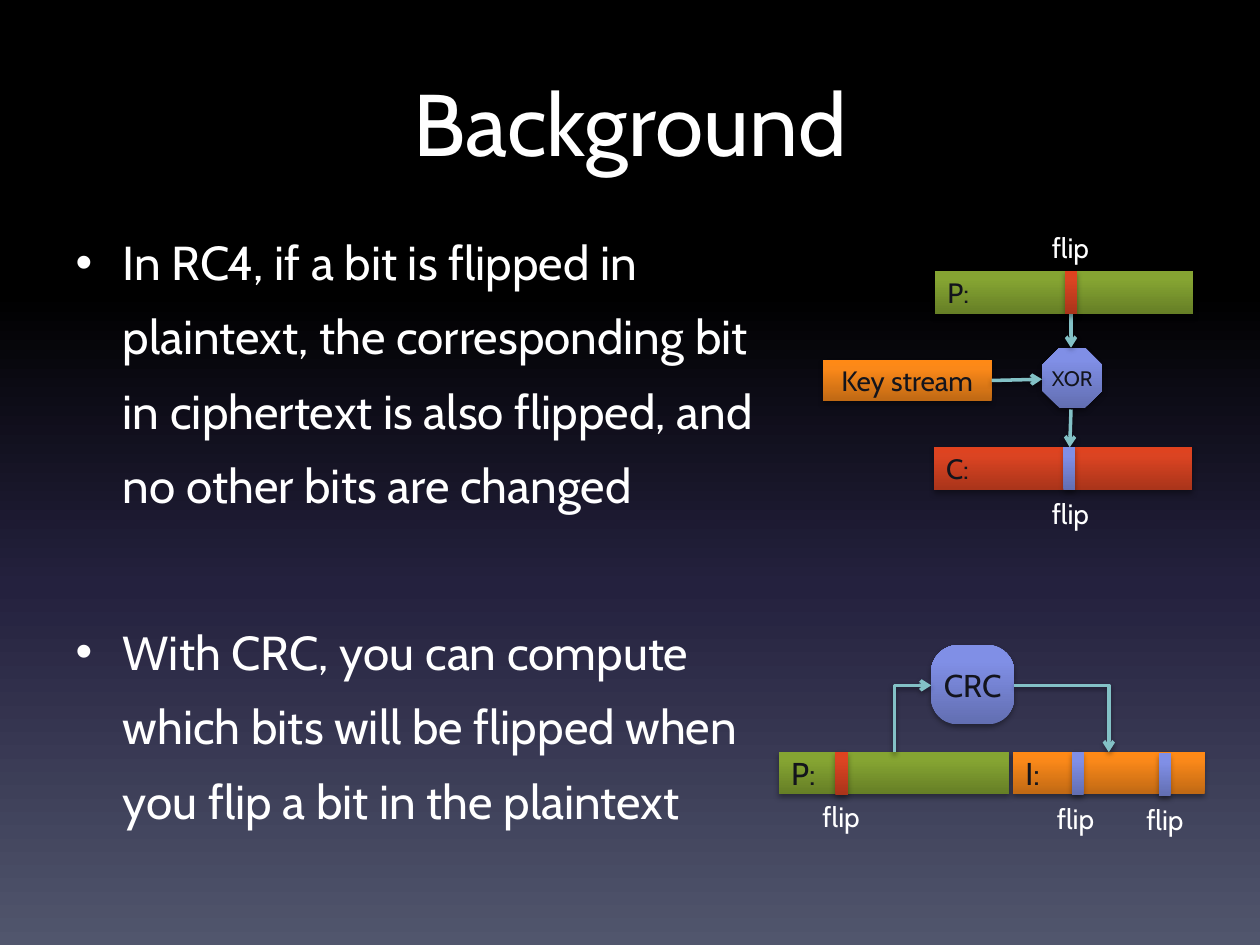
"""Build the Background slide on bit flipping in RC4 and CRC."""
from dataclasses import dataclass

from lxml.etree import SubElement as Sub
from pptx import Presentation
from pptx.dml.color import RGBColor
from pptx.enum.shapes import MSO_CONNECTOR as Conn, MSO_SHAPE as Kind
from pptx.enum.text import MSO_ANCHOR as Anchor, MSO_AUTO_SIZE as Fit, PP_ALIGN as Align
from pptx.oxml.ns import qn
from pptx.util import Inches, Pt

INK = {"text": "FFFFFF", "dark": "13141C", "line": "83C1C6", "shade": "000000"}
FADE = {
    "back": {0: "000000", 31: "000000", 62: "24213E", 100: "51566D"},
    "green": {0: "667F26", 80: "85A432", 100: "87A730"},
    "red": {0: "A9341A", 80: "DB4422", 100: "E0421E"},
    "orange": {0: "C06914", 80: "FA8819", 100: "FF8915"},
    "blue": {0: "626EB1", 80: "808FE6", 100: "7E8EE9"},
}
MID = {"vertical_anchor": Anchor.MIDDLE, "word_wrap": True, "auto_size": Fit.NONE}
TOP = MID | {"vertical_anchor": Anchor.TOP}
TAG = TOP | {"word_wrap": False, "margin_left": 0, "margin_right": 0}


@dataclass
class Block:
    x: float
    y: float
    w: float
    h: float
    fade: str
    text: str = ""
    size: int = 16
    align: Align = Align.CENTER
    kind: Kind = Kind.RECTANGLE
    side: float = 0.1


@dataclass
class Link:
    x: float
    y: float
    to_x: float
    to_y: float
    bend: str = ""


@dataclass
class Flip:
    x: float
    y: float
    fade: str
    tag_x: float
    tag_y: float
    w: float = 0.09


BLOCKS = [
    Block(7.42, 2.15, 2.05, 0.34, "green", "P:", align=Align.LEFT),
    Block(7.41, 3.55, 2.05, 0.34, "red", "C:", align=Align.LEFT),
    Block(6.53, 2.86, 1.34, 0.32, "orange", "Key stream"),
    Block(8.27, 2.76, 0.48, 0.48, "blue", "XOR", 12, kind=Kind.OCTAGON, side=0),
    Block(6.18, 5.97, 1.83, 0.33, "green", "P:", 18, Align.LEFT),
    Block(7.39, 5.12, 0.66, 0.63, "blue", "CRC", 18, kind=Kind.ROUNDED_RECTANGLE, side=0),
    Block(8.04, 5.97, 1.52, 0.33, "orange", "I:", 18, Align.LEFT),
]
LINKS = [
    Link(8.5, 2.48, 8.5, 2.76),
    Link(7.87, 3.02, 8.27, 3.01),
    Link(8.5, 3.25, 8.49, 3.55),
    Link(7.1, 5.97, 7.39, 5.44, "up"),
    Link(8.05, 5.44, 8.8, 5.97, "down"),
]
FLIPS = [
    Flip(8.45, 2.15, "red", 8.25, 1.78, 0.1),
    Flip(8.44, 3.55, "blue", 8.25, 3.89),
    Flip(6.63, 5.97, "red", 6.43, 6.3, 0.1),
    Flip(8.51, 5.97, "blue", 8.29, 6.31),
    Flip(9.2, 5.98, "blue", 9, 6.32),
]
POINTS = {
    "In RC4, if a bit is flipped in plaintext, the corresponding bit "
    "in ciphertext is also flipped, and no other bits are changed": 5.4,
    "With CRC, you can compute which bits will be flipped when "
    "you flip a bit in the plaintext": 53,
}


def put(item, form: dict) -> None:
    for key, val in form.items():
        setattr(item, key, val)


def write(para, text: str, size: float, ink: str, align: Align) -> None:
    run = para.add_run()
    run.text = text
    put(run.font, {"name": "Cabin", "size": Pt(size)})
    run.font.color.rgb = RGBColor.from_string(INK[ink])
    para.alignment = align


def paint(fill, root, fade: str, angle: int) -> None:
    fill.gradient()
    fill.gradient_angle = angle
    stops = next(root.iter(qn("a:gsLst")))
    for old in list(stops):
        stops.remove(old)
    for pos, tint in FADE[fade].items():
        stop = Sub(stops, qn("a:gs"), pos=str(pos * 1000))
        Sub(stop, qn("a:srgbClr"), val=tint)


def shade(item, dist: float, alpha: int) -> None:
    glow = Sub(item._element.spPr, qn("a:effectLst"))
    cast = Sub(glow, qn("a:outerShdw"), blurRad=str(Pt(3.1)), dist=str(Pt(dist)),
               dir="5400000", rotWithShape="0")
    tint = Sub(cast, qn("a:srgbClr"), val=INK["shade"])
    Sub(tint, qn("a:alpha"), val=str(alpha * 1000))


def add_block(slide, b: Block) -> None:
    item = slide.shapes.add_shape(b.kind, *map(Inches, (b.x, b.y, b.w, b.h)))
    if b.kind == Kind.ROUNDED_RECTANGLE:
        item.adjustments[0] = 0.34
    paint(item.fill, item._element, b.fade, 90)
    item.line.fill.background()
    shade(item, 1.8, 35)
    if b.text:
        frame = item.text_frame
        put(frame, MID | {"margin_left": Inches(b.side), "margin_right": Inches(b.side)})
        write(frame.paragraphs[0], b.text, b.size, "dark", b.align)


def add_link(slide, k: Link) -> None:
    ends = k.x, k.y, k.to_x, k.to_y
    if k.bend == "up":
        mid_x, mid_y = (k.x + k.to_x) / 2, (k.y + k.to_y) / 2
        half_w, half_h = (k.y - k.to_y) / 2, (k.to_x - k.x) / 2
        ends = mid_x + half_w, mid_y + half_h, mid_x - half_w, mid_y - half_h
    kind = Conn.ELBOW if k.bend else Conn.STRAIGHT
    item = slide.shapes.add_connector(kind, *map(Inches, ends))
    spot = item._element.spPr
    if k.bend:
        spot.find(qn("a:prstGeom")).set("prst", "bentConnector2")
    if k.bend == "up":
        spot.find(qn("a:xfrm")).set("rot", "5400000")
    item.line.color.rgb = RGBColor.from_string(INK["line"])
    item.line.width = Pt(2)
    Sub(spot.find(qn("a:ln")), qn("a:tailEnd"), type="arrow")
    shade(item, 1.6, 38)


def add_flip(slide, f: Flip) -> None:
    add_block(slide, Block(f.x, f.y, f.w, 0.34, f.fade))
    box = slide.shapes.add_textbox(*map(Inches, (f.tag_x, f.tag_y, 0.49, 0.37)))
    put(box.text_frame, TAG)
    write(box.text_frame.paragraphs[0], "flip", 16, "text", Align.CENTER)


def add_text(slide) -> None:
    head, body = slide.placeholders
    put(head, {"left": Inches(0.5), "top": Inches(0.5),
               "width": Inches(9), "height": Inches(1.25)})
    put(body, {"left": Inches(0.5), "top": Inches(1.88),
               "width": Inches(5.64), "height": Inches(5.13)})
    put(head.text_frame, TOP)
    write(head.text_frame.paragraphs[0], "Background", 50, "text", Align.CENTER)
    frame = body.text_frame
    put(frame, MID | {"margin_bottom": Inches(0.65)})
    for i, (text, gap) in enumerate(POINTS.items()):
        para = frame.add_paragraph() if i else frame.paragraphs[0]
        put(para, {"line_spacing": 1.3, "space_before": Pt(gap)})
        write(para, text, 27.2, "text", Align.LEFT)
        para.font.color.rgb = RGBColor.from_string(INK["text"])


def main() -> None:
    deck = Presentation()
    put(deck, {"slide_width": Inches(10), "slide_height": Inches(7.5)})
    slide = deck.slides.add_slide(deck.slide_layouts[1])
    paint(slide.background.fill, slide._element, "back", 270)
    add_text(slide)
    for draw, parts in ((add_block, BLOCKS), (add_link, LINKS), (add_flip, FLIPS)):
        for part in parts:
            draw(slide, part)
    deck.save("out.pptx")


if __name__ == "__main__":
    main()
